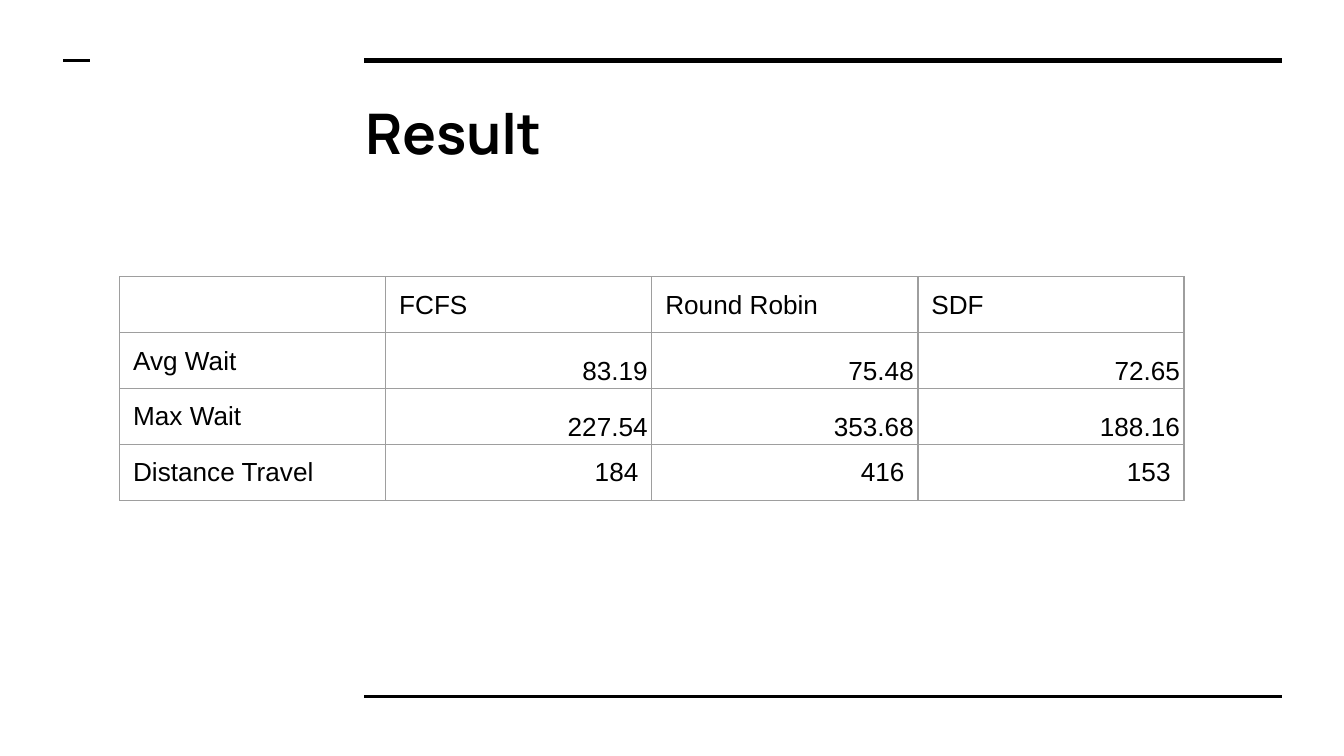
from dataclasses import dataclass

from lxml.etree import SubElement
from pptx import Presentation
from pptx.dml.color import RGBColor
from pptx.enum.shapes import MSO_CONNECTOR
from pptx.enum.text import MSO_ANCHOR, PP_ALIGN
from pptx.oxml.ns import qn
from pptx.util import Inches, Pt


@dataclass(frozen=True)
class Theme:
    """Colours, fonts and type sizes."""

    ink: str = "000000"
    grid: str = "9E9E9E"
    title_font: str = "Manrope"
    body_font: str = "Arial"
    title_size: int = 30
    body_size: int = 14
    grid_width: float = 0.75


@dataclass(frozen=True)
class Rule:
    """A horizontal line in inches, with its weight in points."""

    left: float
    right: float
    top: float
    weight: float


@dataclass(frozen=True)
class CellStyle:
    """Insets in inches, and the placing of text in a cell."""

    inset_x: float = 0.1
    inset_top: float = 0.1
    inset_bottom: float = 0.08
    align: PP_ALIGN = PP_ALIGN.LEFT
    anchor: MSO_ANCHOR = MSO_ANCHOR.TOP
    spacing: float | None = None


THEME = Theme()
WIDTH = 10
HEIGHT = WIDTH * 9 / 16
COLUMN, ROW = 1.98, 1.25 / 3
TABLE_LEFT, TABLE_TOP = 0.89, 2.06
CONTENT_LEFT, CONTENT_RIGHT, HEADER_TOP = 2.71, 9.54, 0.45

RULES = (
    Rule(CONTENT_LEFT, CONTENT_RIGHT, HEADER_TOP, 3),
    Rule(CONTENT_LEFT, CONTENT_RIGHT, 5.18, 1.5),
    Rule(0.47, 0.67, HEADER_TOP, 1.5),
)
LABEL = CellStyle()
DECIMAL = CellStyle(0.03, 0.02, 0.02, PP_ALIGN.RIGHT, MSO_ANCHOR.BOTTOM, 1.15)
WHOLE = CellStyle(align=PP_ALIGN.RIGHT)
RESULTS = (
    (LABEL, ("", "FCFS", "Round Robin", "SDF")),
    (DECIMAL, ("Avg Wait", "83.19", "75.48", "72.65")),
    (DECIMAL, ("Max Wait", "227.54", "353.68", "188.16")),
    (WHOLE, ("Distance Travel", "184", "416", "153")),
)


def apply(target, values: dict) -> None:
    """Set each named attribute on the target."""
    for name, value in values.items():
        setattr(target, name, value)


def write(para, text: str, font: str, size: int, bold: bool = False) -> None:
    """Add one formatted span, or size the paragraph end when empty."""
    if not text:
        SubElement(para._p, qn("a:endParaRPr"), sz=str(size * 100))
        return
    span = para.add_run()
    span.text = text
    apply(span.font, {"name": font, "size": Pt(size), "bold": bold})
    span.font.color.rgb = RGBColor.from_string(THEME.ink)


def draw_rule(page, rule: Rule) -> None:
    """Draw a horizontal line without shadow."""
    line = page.shapes.add_connector(
        MSO_CONNECTOR.STRAIGHT,
        *map(Inches, (rule.left, rule.top, rule.right, rule.top)),
    )
    line.line.color.rgb = RGBColor.from_string(THEME.ink)
    line.line.width = Pt(rule.weight)
    SubElement(line._element.spPr, qn("a:effectLst"))


def draw_title(page, text: str) -> None:
    """Draw the slide heading."""
    box = page.shapes.add_textbox(*map(Inches, (2.62, 0.63, 6.91, 0.69)))
    frame = box.text_frame
    margins = ("margin_left", "margin_right", "margin_top", "margin_bottom")
    apply(frame, {"word_wrap": True, **dict.fromkeys(margins, Inches(0.1))})
    write(frame.paragraphs[0], text, THEME.title_font, THEME.title_size, True)


def draw_borders(cell) -> None:
    """Outline a cell on all four sides."""
    properties = cell._tc.get_or_add_tcPr()
    for side in ("lnL", "lnR", "lnT", "lnB"):
        line = SubElement(properties, qn(f"a:{side}"), w=str(int(Pt(THEME.grid_width))))
        fill = SubElement(line, qn("a:solidFill"))
        SubElement(fill, qn("a:srgbClr"), val=THEME.grid)


def draw_cell(cell, text: str, style: CellStyle) -> None:
    """Format and fill in one table cell."""
    draw_borders(cell)
    cell.fill.background()
    apply(cell, {
        "margin_left": Inches(style.inset_x),
        "margin_right": Inches(style.inset_x),
        "margin_top": Inches(style.inset_top),
        "margin_bottom": Inches(style.inset_bottom),
        "vertical_anchor": style.anchor,
    })
    para = cell.text_frame.paragraphs[0]
    apply(para, {"alignment": style.align, "line_spacing": style.spacing})
    write(para, text, THEME.body_font, THEME.body_size)


def draw_results(page) -> None:
    """Draw the table of results on an even grid."""
    rows, columns = len(RESULTS), len(RESULTS[0][1])
    size = (TABLE_LEFT, TABLE_TOP, columns * COLUMN, rows * ROW)
    table = page.shapes.add_table(rows, columns, *map(Inches, size)).table
    apply(table, {"first_row": False, "horz_banding": False})
    for row, (style, texts) in enumerate(RESULTS):
        for column, text in enumerate(texts):
            draw_cell(table.cell(row, column), text, style if column else LABEL)


def main() -> None:
    """Build and save the deck."""
    deck = Presentation()
    apply(deck, {"slide_width": Inches(WIDTH), "slide_height": Inches(HEIGHT)})
    page = deck.slides.add_slide(deck.slide_layouts[6])
    for rule in RULES:
        draw_rule(page, rule)
    draw_title(page, "Result")
    draw_results(page)
    deck.save("out.pptx")


if __name__ == "__main__":
    main()
